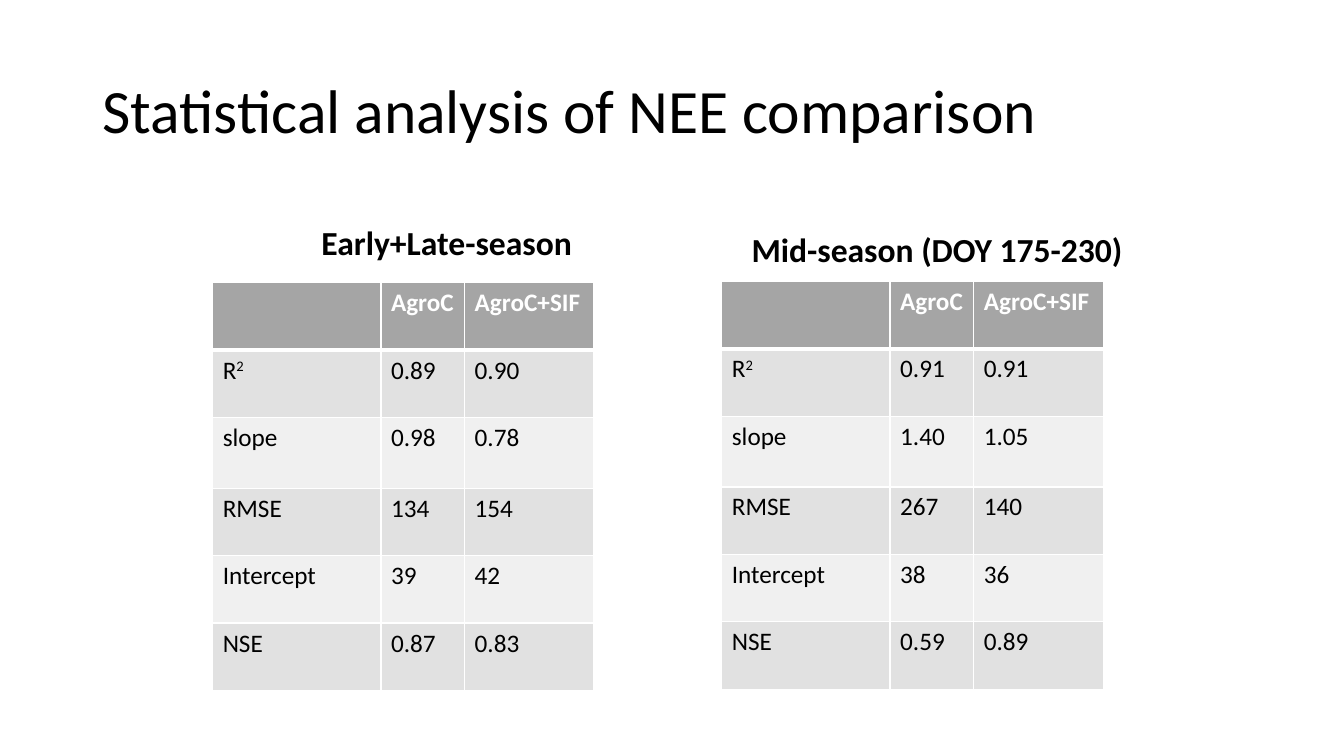
from lxml import etree
from pptx import Presentation
from pptx.dml.color import RGBColor
from pptx.enum.text import MSO_ANCHOR
from pptx.oxml.ns import qn
from pptx.util import Cm, Pt

MIDDLE = MSO_ANCHOR.MIDDLE
TOP = MSO_ANCHOR.TOP

BLACK = RGBColor(0x00, 0x00, 0x00)
WHITE = RGBColor(0xFF, 0xFF, 0xFF)
HEADER_GREY = RGBColor(0xA5, 0xA5, 0xA5)
BAND_GREYS = (RGBColor(0xF0, 0xF0, 0xF0), RGBColor(0xE1, 0xE1, 0xE1))

FONT = "Calibri"
COLUMN_WIDTHS = (4.24, 2.11, 3.26)
ROW_HEIGHTS = (1.7, 1.7, 1.78, 1.7, 1.7, 1.7)
MODELS = ("", "AgroC", "AgroC+SIF")
STATISTICS = ("R2", "slope", "RMSE", "Intercept", "NSE")
EARLY_LATE = (("0.89", "0.90"), ("0.98", "0.78"), ("134", "154"),
              ("39", "42"), ("0.87", "0.83"))
MID_SEASON = (("0.91", "0.91"), ("1.40", "1.05"), ("267", "140"),
              ("38", "36"), ("0.59", "0.89"))


def format_runs(paragraph, size, color, bold=False):
    """Apply the slide font to every run of a paragraph."""
    for run in paragraph.runs:
        run.font.name = FONT
        run.font.size = Pt(size)
        run.font.bold = bold
        run.font.color.rgb = color


def add_heading(slide, text, left, top, width, height, size,
                bold=True, wrap=True, anchor=TOP, line_spacing=1.0):
    """Add a one-paragraph black heading."""
    frame = slide.shapes.add_textbox(
        Cm(left), Cm(top), Cm(width), Cm(height)).text_frame
    frame.word_wrap = wrap
    frame.vertical_anchor = anchor
    frame.text = text
    heading = frame.paragraphs[0]
    heading.line_spacing = line_spacing
    format_runs(heading, size, BLACK, bold)


def set_borders(cell, top, bottom):
    """Draw white borders around a cell, with widths in points."""
    properties = cell._tc.get_or_add_tcPr()
    sides = (("L", 1), ("R", 1), ("T", top), ("B", bottom))
    for position, (side, width) in enumerate(sides):
        border = etree.Element(qn(f"a:ln{side}"), w=str(Pt(width)))
        fill = etree.SubElement(border, qn("a:solidFill"))
        etree.SubElement(fill, qn("a:srgbClr"), val=str(WHITE))
        properties.insert(position, border)


def fill_cell(cell, text, row):
    """Write one table cell and style it by its row."""
    is_header = row == 0
    paragraph = cell.text_frame.paragraphs[0]
    if text == "R2":
        paragraph.text = "R"
        exponent = paragraph.add_run()
        exponent.text = "2"
        exponent.font._element.set("baseline", "30000")
    else:
        paragraph.text = text
    format_runs(paragraph, 18, WHITE if is_header else BLACK, is_header)
    cell.fill.solid()
    cell.fill.fore_color.rgb = HEADER_GREY if is_header else BAND_GREYS[row % 2]
    set_borders(cell, 3 if row == 1 else 1, 3 if is_header else 1)


def add_statistics_table(slide, left, top, values):
    """Add the table of model statistics for one season."""
    rows = [MODELS] + [(name, *pair) for name, pair in zip(STATISTICS, values)]
    table = slide.shapes.add_table(
        len(rows), len(MODELS), Cm(left), Cm(top),
        Cm(sum(COLUMN_WIDTHS)), Cm(sum(ROW_HEIGHTS))).table
    for column, width in zip(table.columns, COLUMN_WIDTHS):
        column.width = Cm(width)
    for table_row, height in zip(table.rows, ROW_HEIGHTS):
        table_row.height = Cm(height)
    for row, texts in enumerate(rows):
        for column, text in enumerate(texts):
            fill_cell(table.cell(row, column), text, row)


def main():
    """Build the slide and save it."""
    presentation = Presentation()
    presentation.slide_width = Cm(33.87)
    presentation.slide_height = Cm(19.05)
    slide = presentation.slides.add_slide(presentation.slide_layouts[6])
    add_heading(slide, "Statistical analysis of NEE comparison",
                2.33, 1.01, 29.21, 3.68, 44,
                bold=False, anchor=MIDDLE, line_spacing=0.9)
    add_heading(slide, "Mid-season (DOY 175-230)", 18.69, 5.64, 9.96, 1.28, 24)
    add_heading(slide, "Early+Late-season", 7.85, 5.46, 6.91, 1.28, 24,
                wrap=False)
    add_statistics_table(slide, 18.19, 7.09, MID_SEASON)
    add_statistics_table(slide, 5.36, 7.12, EARLY_LATE)
    presentation.save("out.pptx")


if __name__ == "__main__":
    main()
